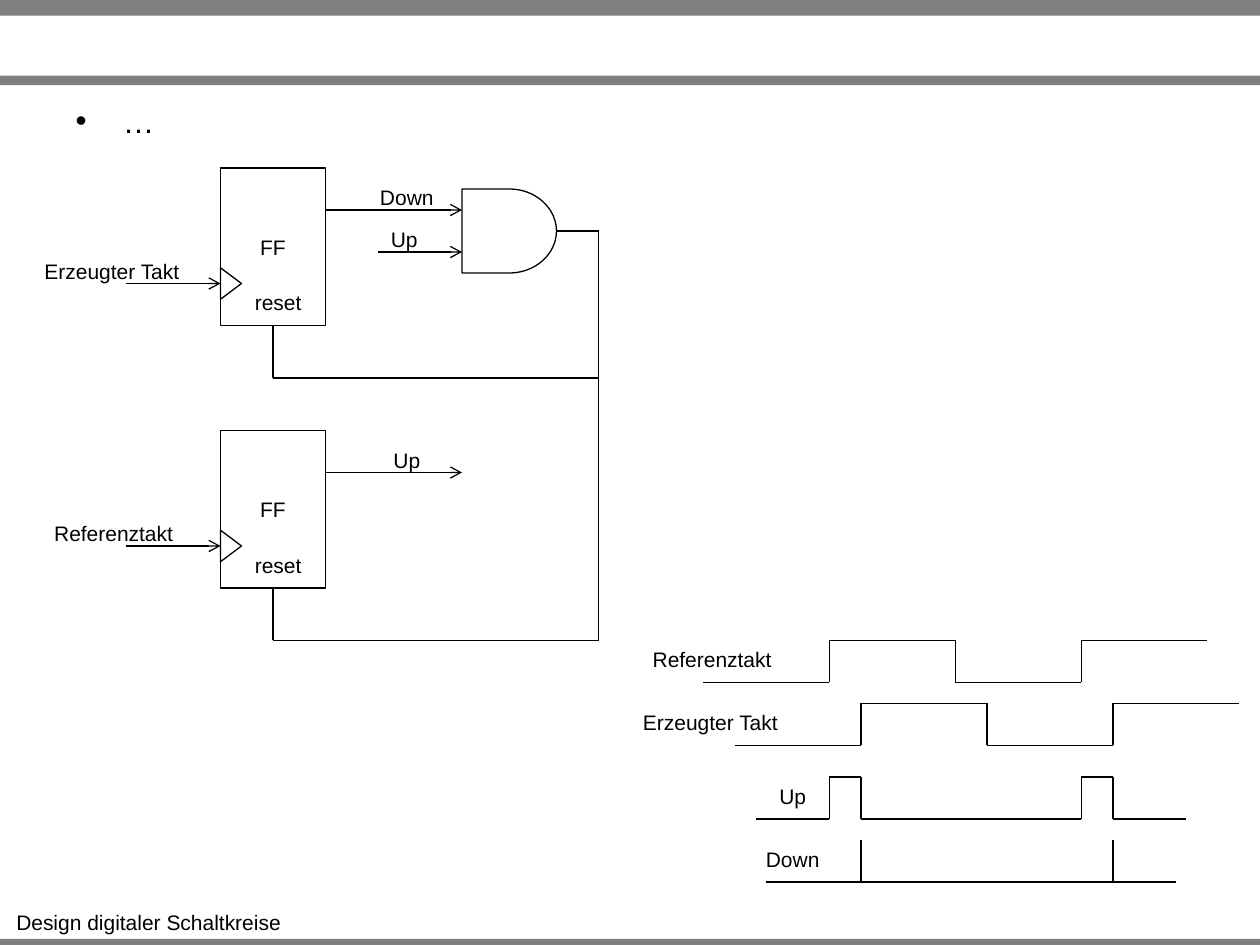
from itertools import pairwise

from lxml import etree
from pptx import Presentation
from pptx.dml.color import RGBColor
from pptx.enum import shapes, text
from pptx.oxml.ns import qn
from pptx.util import Pt

BLACK = RGBColor(0x00, 0x00, 0x00)
GRAY = RGBColor(0x80, 0x80, 0x80)
FONT = "Arial"
LINE_WIDTH = Pt(0.75)
LABEL_HEIGHT = 21.6

deck = Presentation()
deck.slide_width, deck.slide_height = Pt(720), Pt(540)
page = deck.slides.add_slide(deck.slide_layouts[1])
page.shapes.title.element.getparent().remove(page.shapes.title.element)


def add_wire(points, arrow=False):
    """Join consecutive points with straight lines; arrow puts a head on each end."""
    for (x1, y1), (x2, y2) in pairwise(points):
        wire = page.shapes.add_connector(
            shapes.MSO_CONNECTOR.STRAIGHT, Pt(x1), Pt(y1), Pt(x2), Pt(y2))
        wire.line.color.rgb = BLACK
        wire.line.width = LINE_WIDTH
        if arrow:
            etree.SubElement(wire.line._get_or_add_ln(), qn("a:tailEnd"), type="arrow")
        etree.SubElement(wire.element.spPr, qn("a:effectLst"))


def add_box(kind, left, top, width, height, label="", fill=None):
    """Add a filled bar, an outlined symbol, or (kind None) a bare text label."""
    frame = Pt(left), Pt(top), Pt(width), Pt(height)
    if kind is None:
        box = page.shapes.add_textbox(*frame)
        box.text_frame.word_wrap = False
    else:
        box = page.shapes.add_shape(kind, *frame)
        box.shadow.inherit = False
        box.text_frame.vertical_anchor = text.MSO_ANCHOR.MIDDLE
        if fill is None:
            box.fill.background()
            box.line.color.rgb = BLACK
            box.line.width = LINE_WIDTH
        else:
            box.fill.solid()
            box.fill.fore_color.rgb = fill
            box.line.fill.background()
    if label:
        box.text_frame.text = label
        para = box.text_frame.paragraphs[0]
        para.alignment = text.PP_ALIGN.CENTER
        para.font.name, para.font.size = FONT, Pt(12)
        para.font.color.rgb = BLACK
    return box


# Frame bars
for top, height in ((536.5, 5.5), (0, 9), (43.2, 5.5)):
    add_box(shapes.MSO_SHAPE.RECTANGLE, 0, top, 720, height, fill=GRAY)

# Bullet list
body = page.placeholders[1]
body.left, body.top, body.width, body.height = Pt(36), Pt(54.7), Pt(648), Pt(71.3)
body.text_frame.auto_size = text.MSO_AUTO_SIZE.NONE
body.text_frame.text = "…"
para = body.text_frame.paragraphs[0]
para.space_before = Pt(0)
properties = para._p.get_or_add_pPr()
properties.set("marL", str(Pt(27)))
properties.set("indent", str(-Pt(27)))
etree.SubElement(properties, qn("a:buChar"), char="•")
para.font.name, para.font.size = FONT, Pt(18)
para.font.color.rgb = BLACK

# Flip-flops with clock input, output and reset line
for top in (96, 246):
    add_box(shapes.MSO_SHAPE.RECTANGLE, 126, top, 60, 90, "FF")
    clock = add_box(shapes.MSO_SHAPE.ISOSCELES_TRIANGLE, 123, top + 60, 18, 12)
    clock.rotation = 90
    add_wire([(72, top + 66), (126, top + 66)], arrow=True)
    add_wire([(186, top + 24), (264, top + 24)], arrow=True)
    add_wire([(156, top + 90), (156, top + 120), (342, top + 120)])

# AND gate feeding the reset lines
add_box(shapes.MSO_SHAPE.FLOWCHART_DELAY, 264, 108, 54, 48)
add_wire([(216, 144), (264, 144)], arrow=True)
add_wire([(318, 132), (342, 132), (342, 366)])

# Timing diagram: two clocks, the second one 18 pt later
for start, high in ((402, 366), (420, 402)):
    low = high + 24
    rise, fall, next_rise, end = (start + 72 * step for step in range(1, 5))
    add_wire([(start, low), (rise, low), (rise, high), (fall, high),
              (fall, low), (next_rise, low), (next_rise, high), (end, high)])

# Timing diagram: Up pulses between the clock edges, Down spikes
add_wire([(432, 468), (474, 468), (474, 444), (492, 444), (492, 468),
          (618, 468), (618, 444), (636, 444), (636, 468), (678, 468)])
add_wire([(438, 504), (672, 504)])
for x in (492, 636):
    add_wire([(x, 504), (x, 480)])

# Labels: text, centre, top, width
for label, center, top, width in (
    ("Erzeugter Takt", 64, 144, 92),
    ("Referenztakt", 65, 294, 83),
    ("Down", 232.5, 102, 45),
    ("Up", 231, 126, 30),
    ("Up", 232.5, 252, 30),
    ("reset", 159, 162, 42),
    ("reset", 159, 312, 42),
    ("Referenztakt", 407, 366, 83),
    ("Erzeugter Takt", 406, 402, 92),
    ("Up", 453, 444, 30),
    ("Down", 453, 480, 45),
    ("Design digitaler Schaltkreise", 85, 516, 167),
):
    add_box(None, center - width / 2, top, width, LABEL_HEIGHT, label)

deck.save("out.pptx")
